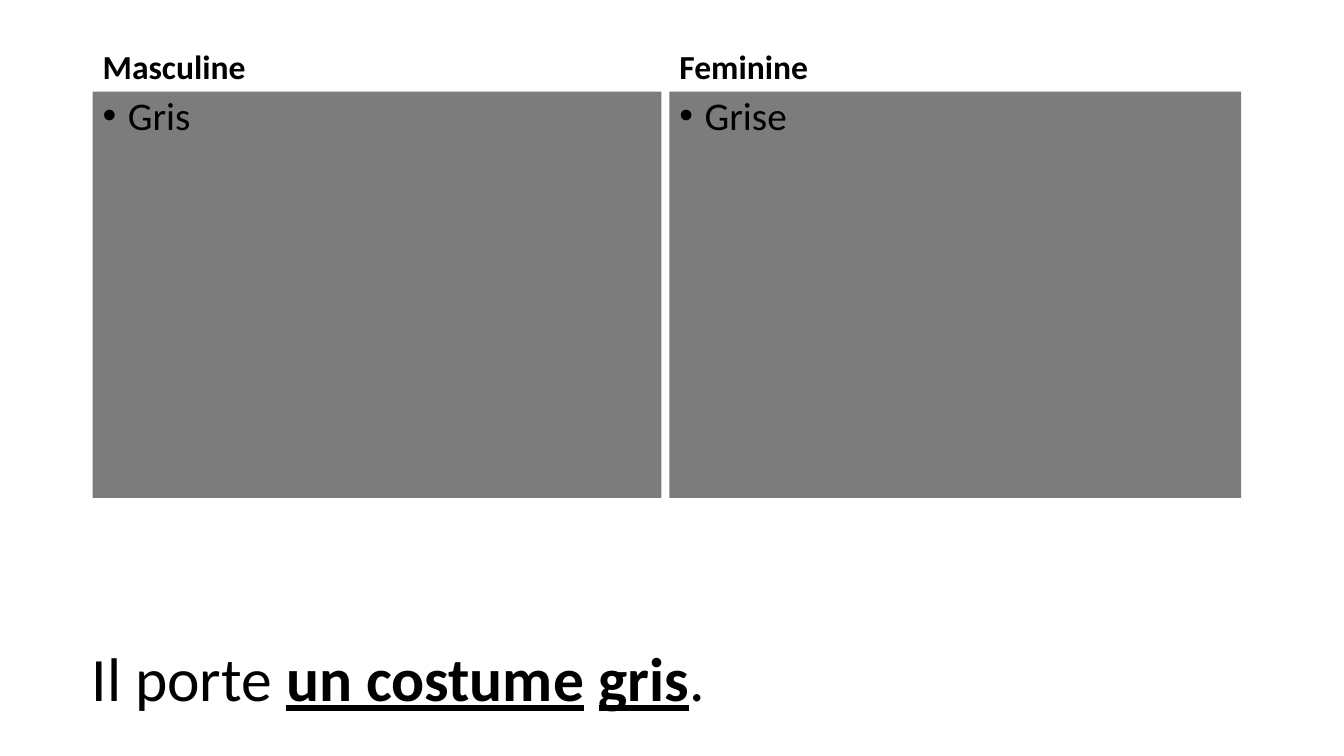
from lxml import etree
from pptx import Presentation
from pptx.dml.color import RGBColor
from pptx.enum.text import MSO_ANCHOR
from pptx.oxml.ns import qn
from pptx.util import Inches, Pt

TOP, MIDDLE, BOTTOM = MSO_ANCHOR.TOP, MSO_ANCHOR.MIDDLE, MSO_ANCHOR.BOTTOM
COLORS = {"ink": "000000", "gray": "7C7C7C"}
FONT = "Calibri"


def add_bullet(para):
    props = para._p.get_or_add_pPr()
    props.set("marL", str(Inches(0.25)))
    props.set("indent", str(-Inches(0.25)))
    etree.SubElement(props, qn("a:buFont")).set("typeface", "Arial")
    etree.SubElement(props, qn("a:buChar")).set("char", "•")


def add_text(slide, box, parts, size, anchor=TOP, before=0, fill=None, bullet=False):
    shape = slide.shapes.add_textbox(*(Inches(n) for n in box))
    if fill:
        shape.fill.solid()
        shape.fill.fore_color.rgb = RGBColor.from_string(COLORS[fill])
    frame = shape.text_frame
    frame.word_wrap = True
    frame.vertical_anchor = anchor
    para = frame.paragraphs[0]
    para.line_spacing = 0.9
    para.space_before = Pt(before)
    if bullet:
        add_bullet(para)
    for text, bold, under in parts:
        run = para.add_run()
        run.text = text
        font = run.font
        font.name, font.size = FONT, Pt(size)
        font.bold, font.underline = bold, under
        font.color.rgb = RGBColor.from_string(COLORS["ink"])


def add_column(slide, box, head, word):
    left, top, width, height = box
    label = 0.9
    add_text(slide, (left, top, width, label), [(head, True, False)],
             24, anchor=BOTTOM, before=10)
    add_text(slide, (left, top + label, width, height - label),
             [(word, False, False)], 28, before=10, fill="gray", bullet=True)


def add_sentence(slide, box):
    parts = [("Il porte ", False), ("un costume", True), (" ", False),
             ("gris", True), (".", False)]
    add_text(slide, box, [(text, key, key) for text, key in parts],
             44, anchor=MIDDLE)


def main():
    deck = Presentation()
    deck.slide_width, deck.slide_height = Inches(13.33), Inches(7.5)
    slide = deck.slides.add_slide(deck.slide_layouts[6])
    add_sentence(slide, (0.81, 6.04, 11.5, 1.45))
    add_column(slide, (0.92, 0.01, 5.64, 4.93), "Masculine", "Gris")
    add_column(slide, (6.64, 0.01, 5.67, 4.93), "Feminine", "Grise")
    deck.save("out.pptx")


if __name__ == "__main__":
    main()
